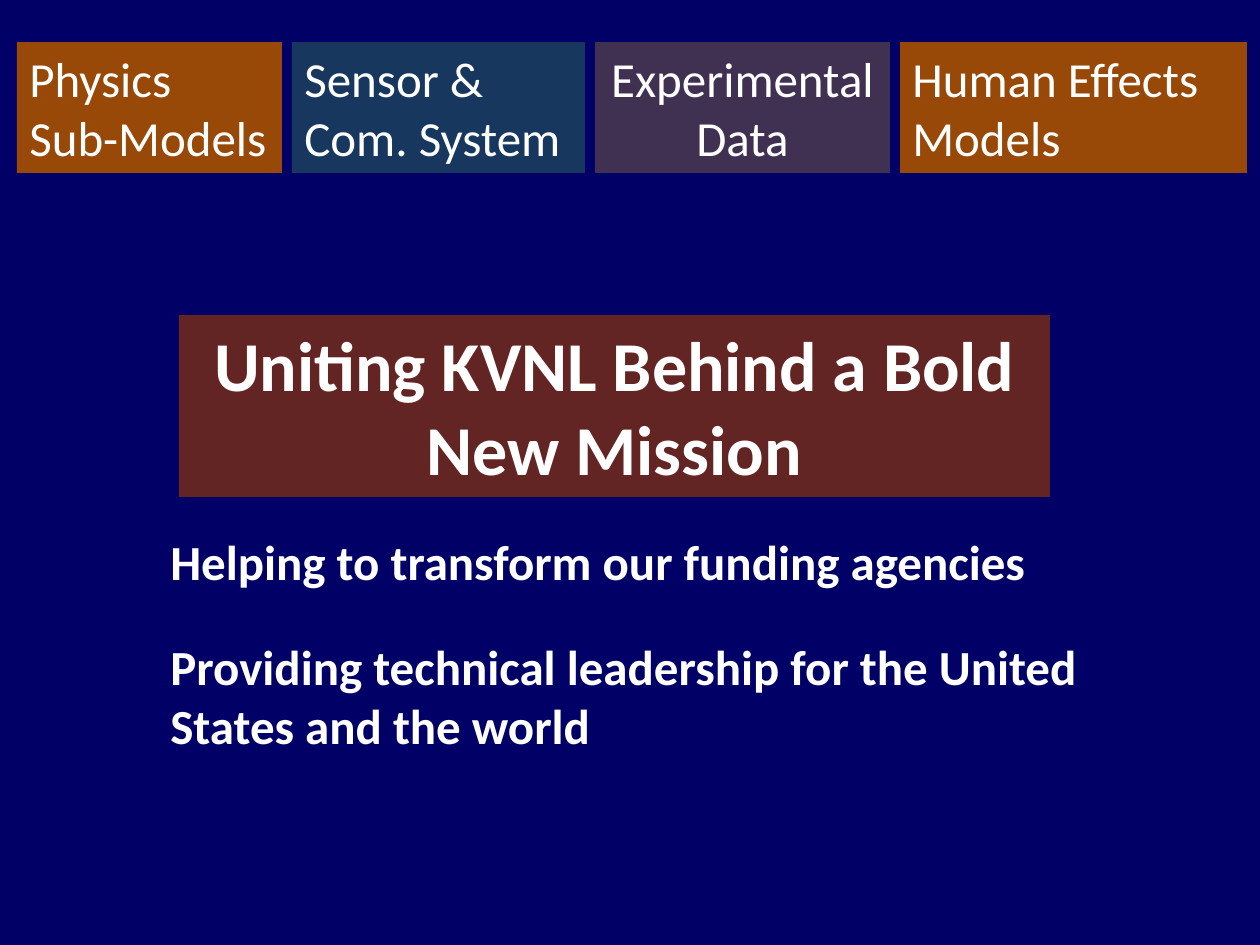
from pptx import Presentation
from pptx import util as u
from pptx.dml.color import RGBColor
from pptx.enum import shapes, text

NAVY = RGBColor(0x00, 0x00, 0x66)
WHITE = RGBColor(0xFF, 0xFF, 0xFF)
ORANGE = RGBColor(0x98, 0x48, 0x07)
BLUE = RGBColor(0x17, 0x37, 0x5E)
PURPLE = RGBColor(0x40, 0x31, 0x52)
MAROON = RGBColor(0x63, 0x25, 0x23)

LEFT, CENTER = text.PP_ALIGN.LEFT, text.PP_ALIGN.CENTER
PX = u.Inches(1) / 126


def px(*lengths):
    return [u.Emu(round(n * PX)) for n in lengths]


class Deck:
    font = {"name": "Calibri", "size": u.Pt(28), "bold": False}

    def __init__(self, width, height):
        self.prs = Presentation()
        self.prs.slide_width, self.prs.slide_height = px(width, height)

    def add_slide(self, color):
        self.s = self.prs.slides.add_slide(self.prs.slide_layouts[6])
        fill = self.s.background.fill
        fill.solid()
        fill.fore_color.rgb = color

    def set_text(self, sp, lines, align=LEFT, wrap=True, **font):
        tf = sp.text_frame
        frame = {"word_wrap": wrap, "vertical_anchor": text.MSO_ANCHOR.TOP,
                 "auto_size": text.MSO_AUTO_SIZE.SHAPE_TO_FIT_TEXT}
        for key, value in frame.items():
            setattr(tf, key, value)
        for i, line in enumerate(lines.split("\n")):
            p = tf.add_paragraph() if i else tf.paragraphs[0]
            p.alignment = align
            r = p.add_run()
            r.text = line
            for key, value in {**self.font, **font}.items():
                setattr(r.font, key, value)
            r.font.color.rgb = WHITE

    def box(self, x, y, w, h, color, lines, **style):
        sp = self.s.shapes.add_shape(shapes.MSO_SHAPE.RECTANGLE, *px(x, y, w, h))
        sp.shadow.inherit = False
        sp.fill.solid()
        sp.fill.fore_color.rgb = color
        sp.line.fill.background()
        self.set_text(sp, lines, **style)

    def label(self, x, y, w, h, lines, **style):
        self.set_text(self.s.shapes.add_textbox(*px(x, y, w, h)), lines, **style)


def main():
    deck = Deck(1260, 945)
    deck.add_slide(NAVY)

    # Row of topics along the top
    topics = [
        (265, ORANGE, "Physics\nSub-Models", {"wrap": False}),
        (293, BLUE, "Sensor & Com. System", {}),
        (295, PURPLE, "Experimental Data", {"align": CENTER}),
        (347, ORANGE, "Human Effects Models", {}),
    ]
    x, gap = 17, 10
    for width, color, lines, style in topics:
        deck.box(x, 42, width, 131, color, lines, **style)
        x += width + gap

    # Central message
    deck.box(179, 315, 871, 182, MAROON, "Uniting KVNL Behind a Bold New Mission",
             align=CENTER, size=u.Pt(40), bold=True)

    # Supporting statements
    deck.label(158, 525, 982, 72, "Helping to transform our funding agencies", bold=True)
    deck.label(158, 630, 982, 131,
               "Providing technical leadership for the United States and the world", bold=True)

    deck.prs.save("out.pptx")


if __name__ == "__main__":
    main()
